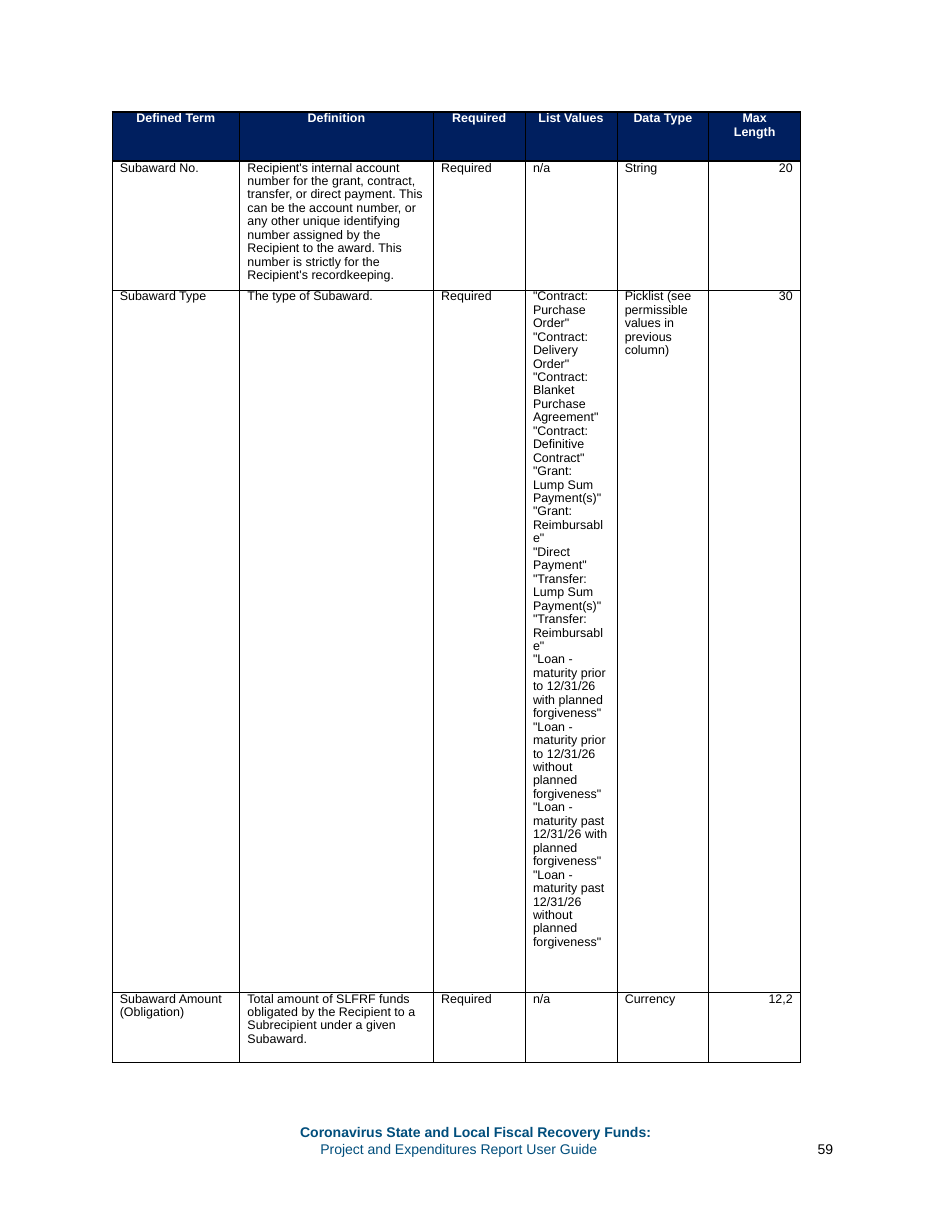
from lxml import etree
from pptx import Presentation, util as u
from pptx.dml.color import RGBColor
from pptx.enum import text
from pptx.oxml import ns

NAVY = RGBColor(0x00, 0x1F, 0x5F)
BLUE = RGBColor(0x00, 0x4E, 0x7C)
BLACK = RGBColor(0, 0, 0)
WHITE = RGBColor(255, 255, 255)

HEADERS = ["Defined Term", "Definition", "Required", "List Values", "Data Type", "Max\nLength"]
COLUMN_WIDTHS = [1.14, 1.73, 0.82, 0.82, 0.82, 0.82]
ROW_HEIGHTS = [0.44, 1.15, 6.27, 0.63]

SUBAWARD_TYPES = [
    '"Contract:\nPurchase\nOrder"',
    '"Contract:\nDelivery\nOrder"',
    '"Contract:\nBlanket\nPurchase\nAgreement"',
    '"Contract:\nDefinitive\nContract"',
    '"Grant:\nLump Sum\nPayment(s)"',
    '"Grant:\nReimbursabl\ne"',
    '"Direct\nPayment"',
    '"Transfer:\nLump Sum\nPayment(s)"',
    '"Transfer:\nReimbursabl\ne"',
    '"Loan -\nmaturity prior\nto 12/31/26\nwith planned\nforgiveness"',
    '"Loan -\nmaturity prior\nto 12/31/26\nwithout\nplanned\nforgiveness"',
    '"Loan -\nmaturity past\n12/31/26 with\nplanned\nforgiveness"',
    '"Loan -\nmaturity past\n12/31/26\nwithout\nplanned\nforgiveness"',
]

# Each cell is a list of paragraphs.
ROWS = [
    [[header] for header in HEADERS],
    [["Subaward No."],
     ["Recipient's internal account number for the grant, contract, transfer, or direct "
      "payment. This can be the account number, or any other unique identifying number "
      "assigned by the Recipient to the award. This number is strictly for the "
      "Recipient's recordkeeping."],
     ["Required"], ["n/a"], ["String"], ["20"]],
    [["Subaward Type"], ["The type of Subaward."], ["Required"], SUBAWARD_TYPES,
     ["Picklist (see permissible values in previous column)"], ["30"]],
    [["Subaward Amount (Obligation)"],
     ["Total amount of SLFRF funds obligated by the Recipient to a Subrecipient under a "
      "given Subaward."],
     ["Required"], ["n/a"], ["Currency"], ["12,2"]],
]


def add_text(para, content, size, color, bold=False):
    """Add one run per line, with a line break between lines."""
    for index, line in enumerate(content.split("\n")):
        if index:
            para.add_line_break()
        span = para.add_run()
        span.text = line
        span.font.name = "Arial"
        span.font.size = u.Pt(size)
        span.font.bold = bold
        span.font.color.rgb = color


def set_borders(cell, left, right, top, bottom):
    """Draw black cell borders, with widths in points."""
    properties = cell._tc.get_or_add_tcPr()
    for tag, width in (("a:lnL", left), ("a:lnR", right), ("a:lnT", top), ("a:lnB", bottom)):
        line = etree.SubElement(properties, ns.qn(tag), w=str(u.Pt(width)))
        fill = etree.SubElement(line, ns.qn("a:solidFill"))
        etree.SubElement(fill, ns.qn("a:srgbClr"), val=str(BLACK))


deck = Presentation()
deck.slide_width = u.Inches(8.5)
deck.slide_height = u.Inches(11)
page = deck.slides.add_slide(deck.slide_layouts[6])

# Table of subaward fields
frame = page.shapes.add_table(len(ROWS), len(HEADERS), u.Inches(1), u.Inches(1),
                              u.Inches(sum(COLUMN_WIDTHS)), u.Inches(sum(ROW_HEIGHTS)))
table = frame.table
table.first_row = True
table.horz_banding = False
for column, width in zip(table.columns, COLUMN_WIDTHS):
    column.width = u.Inches(width)
for row, height in zip(table.rows, ROW_HEIGHTS):
    row.height = u.Inches(height)

last_column = len(HEADERS) - 1
for r, row in enumerate(ROWS):
    for c, paragraphs in enumerate(row):
        cell = table.cell(r, c)
        is_header = r == 0
        side = u.Inches(0 if is_header else 0.07)
        cell.margin_left = side
        cell.margin_right = side if c == last_column else 0
        cell.margin_top = cell.margin_bottom = 0
        set_borders(cell, 0.5, 1 if c == last_column and not is_header else 0.5,
                    {0: 1, 1: 1.5}.get(r, 0.5), 1.5 if is_header else 0.5)
        if is_header:
            cell.fill.solid()
            cell.fill.fore_color.rgb = NAVY
            alignment = text.PP_ALIGN.CENTER
        else:
            cell.fill.background()
            alignment = text.PP_ALIGN.RIGHT if c == last_column else text.PP_ALIGN.LEFT
        for index, content in enumerate(paragraphs):
            para = cell.text_frame.add_paragraph() if index else cell.text_frame.paragraphs[0]
            para.alignment = alignment
            para.line_spacing = 0.96
            add_text(para, content, 8, WHITE if is_header else BLACK, is_header)

# Footer title lines and page number: left, top, width, height, text, color, bold
FOOTER = [
    (2.68, 10.03, 3.3, 0.15, "Coronavirus State and Local Fiscal Recovery Funds:", BLUE, True),
    (2.86, 10.18, 3, 0.15, "Project and Expenditures Report User Guide", BLUE, False),
    (7.3, 10.18, 0.22, 0.15, "59", BLACK, False),
]
for left, top, width, height, content, color, bold in FOOTER:
    box = page.shapes.add_textbox(u.Inches(left), u.Inches(top), u.Inches(width), u.Inches(height))
    body = box.text_frame
    body.word_wrap = True
    body.margin_left = body.margin_right = body.margin_top = body.margin_bottom = 0
    add_text(body.paragraphs[0], content, 9, color, bold)

deck.save("out.pptx")
